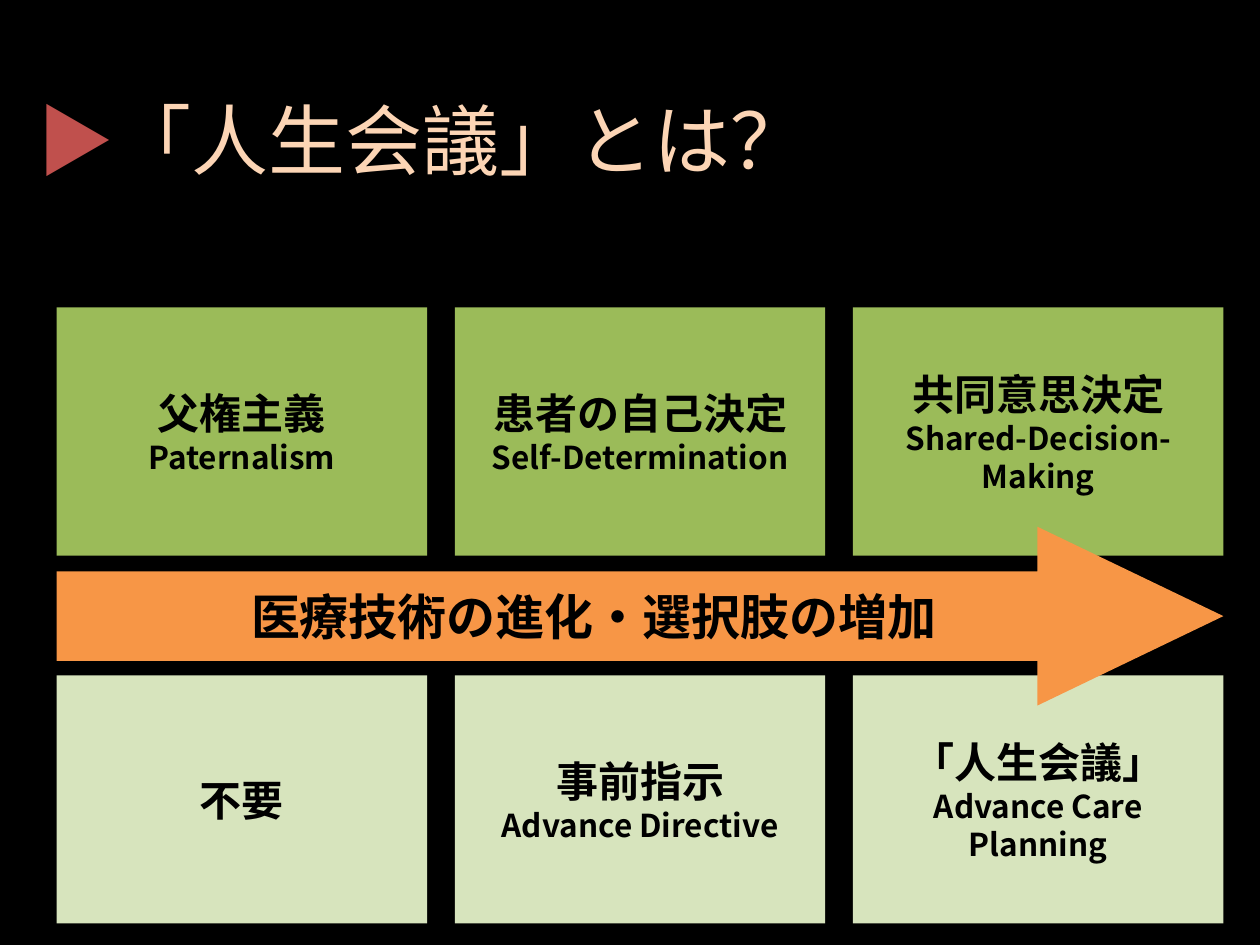
from lxml import etree
from pptx import Presentation
from pptx import util as u
from pptx.dml.color import RGBColor
from pptx.enum import shapes, text
from pptx.oxml.ns import qn

COLORS = {"background": "000000", "ink": "000000", "marker": "C0504D",
          "title": "FCD5B5", "concept": "9BBB59", "practice": "D7E4BD",
          "progress": "F79646"}
FONT = "Noto Sans CJK JP"
LEFT, COLUMN_STEP = 0.45, 3.16
CARD_WIDTH, CARD_HEIGHT = 2.94, 1.97
ROWS = [
    (2.44, "concept", [["父権主義", "Paternalism"],
                       ["患者の自己決定", "Self-Determination"],
                       ["共同意思決定", "Shared-Decision-Making"]]),
    (5.36, "practice", [["不要"],
                        ["事前指示", "Advance Directive"],
                        ["「人生会議」", "Advance Care Planning"]]),
]


def rgb(role):
    """Return the colour of a role."""
    return RGBColor.from_string(COLORS[role])


def add_run(paragraph, wording, size, role, bold):
    """Add a run in the slide's font for Latin and Japanese text."""
    run = paragraph.add_run()
    run.text = wording
    run.font.color.rgb = rgb(role)
    for key, value in {"size": u.Pt(size), "bold": bold, "name": FONT}.items():
        setattr(run.font, key, value)
    etree.SubElement(run.font._element, qn("a:ea"), typeface=FONT)


def add_panel(slide, preset, box, role, lines):
    """Add a filled shape with centred lines of (wording, size)."""
    panel = slide.shapes.add_shape(preset, *map(u.Inches, box))
    panel.shadow.inherit = False
    panel.fill.solid()
    panel.fill.fore_color.rgb = rgb(role)
    panel.line.fill.background()
    frame = panel.text_frame
    frame.word_wrap = True
    frame.vertical_anchor = text.MSO_ANCHOR.MIDDLE
    for index, (wording, size) in enumerate(lines):
        paragraph = frame.add_paragraph() if index else frame.paragraphs[0]
        paragraph.alignment = text.PP_ALIGN.CENTER
        add_run(paragraph, wording, size, "ink", True)
    return panel


def add_title(slide):
    """Fill the title placeholder with the marker and the question."""
    title = slide.shapes.title
    place = {"left": 0.2, "top": 0.68, "width": 6.37, "height": 0.84}
    for key, value in place.items():
        setattr(title, key, u.Inches(value))
    frame = title.text_frame
    layout = {"word_wrap": False, "auto_size": text.MSO_AUTO_SIZE.NONE,
              "vertical_anchor": text.MSO_ANCHOR.MIDDLE}
    for key, value in layout.items():
        setattr(frame, key, value)
    question = frame.paragraphs[0]
    question.alignment = text.PP_ALIGN.LEFT
    add_run(question, "▶", 44, "marker", False)
    add_run(question, "「人生会議」とは？", 44, "title", False)


def add_cards(slide):
    """Lay out the concepts above and the matching practices below."""
    for top, role, cards in ROWS:
        for column, wordings in enumerate(cards):
            box = (LEFT + column * COLUMN_STEP, top, CARD_WIDTH, CARD_HEIGHT)
            add_panel(slide, shapes.MSO_SHAPE.RECTANGLE, box, role,
                      zip(wordings, (24, 18)))


def add_progress_arrow(slide):
    """Add the arrow running between the two rows of cards."""
    width = 2 * COLUMN_STEP + CARD_WIDTH
    arrow = add_panel(slide, shapes.MSO_SHAPE.RIGHT_ARROW,
                      (LEFT, 4.18, width, 1.42), "progress",
                      [("医療技術の進化・選択肢の増加", 28)])
    arrow.adjustments[1] = 1.04


def main():
    """Build and save the slide."""
    deck = Presentation()
    deck.slide_width, deck.slide_height = u.Inches(10), u.Inches(7.5)
    slide = deck.slides.add_slide(deck.slide_layouts.get_by_name("Title Only"))
    slide.background.fill.solid()
    slide.background.fill.fore_color.rgb = rgb("background")
    add_title(slide)
    add_cards(slide)
    add_progress_arrow(slide)
    deck.save("out.pptx")


if __name__ == "__main__":
    main()
